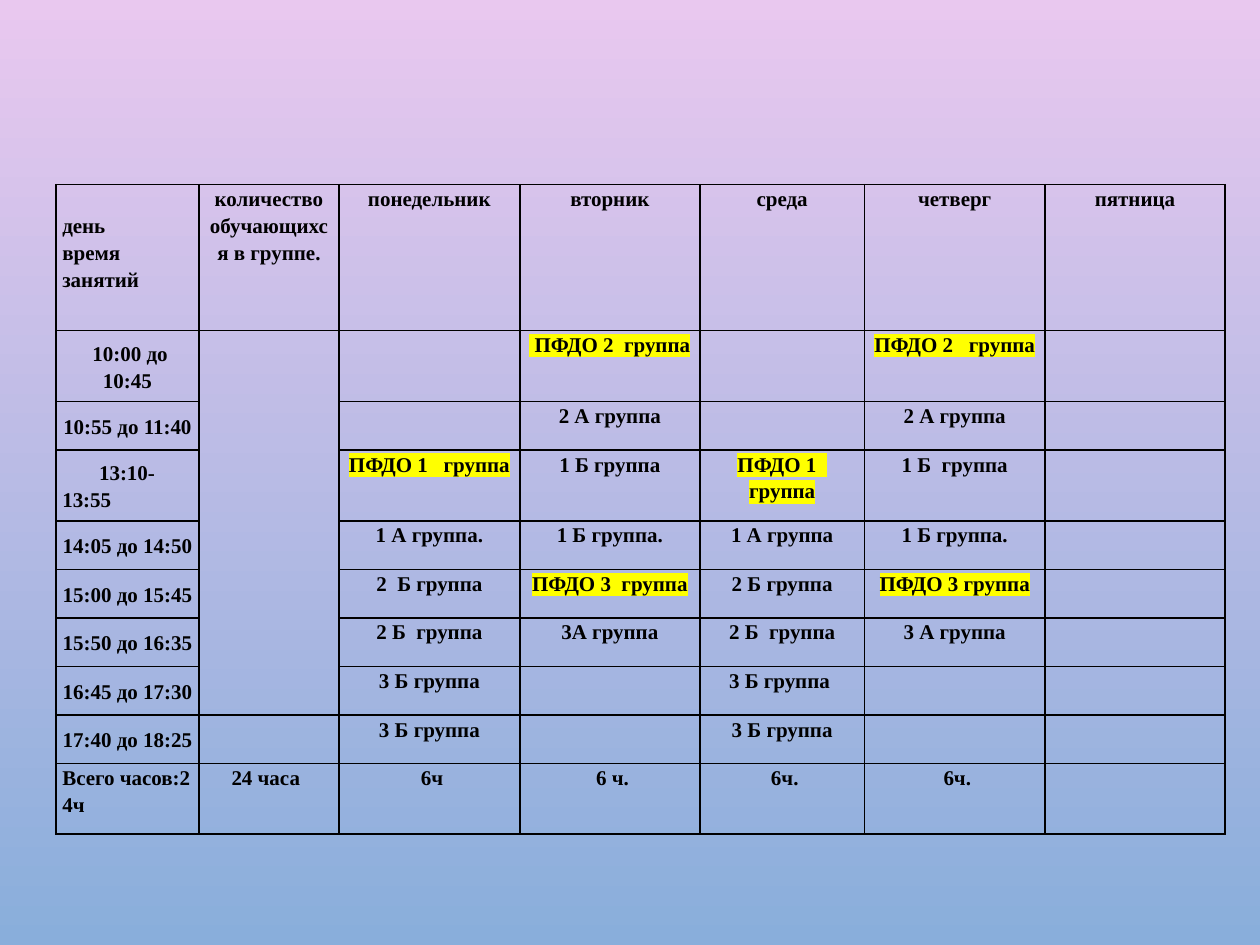
from lxml.etree import SubElement as Sub, Element
from pptx import Presentation
from pptx.dml.color import RGBColor as Rgb
from pptx.enum.text import MSO_ANCHOR as Anchor, PP_ALIGN as Align
from pptx.oxml.ns import qn
from pptx.util import Pt

# Content: one list per table row
ROWS = [
    ["день\nвремя занятий", "количество обучающихся в группе.", "понедельник",
     "вторник", "среда", "четверг", "пятница"],
    [" 10:00 до 10:45", "", "", " ПФДО 2  группа", "", "ПФДО 2   группа", ""],
    ["10:55 до 11:40", "", "", "2 А группа", "", "2 А группа", ""],
    ["13:10- 13:55", "", "ПФДО 1   группа", "1 Б группа", "ПФДО 1   группа",
     "1 Б  группа", ""],
    ["14:05 до 14:50", "", "1 А группа.", "1 Б группа.", "1 А группа",
     "1 Б группа.", ""],
    ["15:00 до 15:45", "", "2  Б группа", "ПФДО 3  группа", "2 Б группа",
     "ПФДО 3 группа", ""],
    ["15:50 до 16:35", "", "2 Б  группа", "3А группа", "2 Б  группа",
     "3 А группа", ""],
    ["16:45 до 17:30", "", "3 Б группа", "", "3 Б группа ", "", ""],
    ["17:40 до 18:25", "", "3 Б группа", "", "3 Б группа", "", ""],
    ["Всего часов:2 4ч", "24 часа", " 6ч", " 6 ч.", " 6ч.", " 6ч.", ""],
]
WIDTHS = [81.7, 80, 103.4, 102.9, 94, 103.2, 102.9]
TALL, MID, LOW = 83.4, 40.5, 27.75
HEIGHTS = [TALL, MID, LOW, MID] + [LOW] * 5 + [MID]
LEFT, TOP = 32, 105.5
COLORS = {"top": "E9C8EF", "base": "89AEDB", "ink": "000000", "mark": "FFFF00"}
FONT = {"name": "Times New Roman", "size": Pt(12), "bold": True}
INSETS = {"margin_left": Pt(3.6), "margin_right": Pt(3.6),
          "margin_top": 0, "margin_bottom": 0}

# Cells aligned left, with their first-line indents
INDENTS = {(0, 0): 0, (3, 0): 21, (9, 0): 0, (9, 1): 15}


def apply(item, values):
    for key, value in values.items():
        setattr(item, key, value)


def style(font):
    apply(font, FONT)
    font.color.rgb = Rgb.from_string(COLORS["ink"])


def border(cell):
    props = cell._tc.get_or_add_tcPr()
    for side in "LRTB":
        line = Sub(props, qn("a:ln" + side), w=str(Pt(1)))
        fill = Sub(line, qn("a:solidFill"))
        Sub(fill, qn("a:srgbClr"), val=COLORS["ink"])


def mark(run):
    glow = Element(qn("a:highlight"))
    Sub(glow, qn("a:srgbClr"), val=COLORS["mark"])
    run._r.rPr.find(qn("a:latin")).addprevious(glow)


def write(cell, text, spot):
    cell.text = text
    for para in cell.text_frame.paragraphs:
        para.line_spacing = 1.15
        para.alignment = Align.LEFT if spot in INDENTS else Align.CENTER
        if INDENTS.get(spot):
            para._p.get_or_add_pPr().set("indent", str(Pt(INDENTS[spot])))
        style(para.font)
        for run in para.runs:
            style(run.font)
            if "ПФДО" in text:
                mark(run)


deck = Presentation()
deck.slide_width, deck.slide_height = Pt(720), Pt(540)
slide = deck.slides.add_slide(deck.slide_layouts[6])

# Background gradient, top to bottom
back = slide.background.fill
back.gradient()
back.gradient_angle = 270
for stop, key in zip(back.gradient_stops, ("top", "base")):
    stop.color.rgb = Rgb.from_string(COLORS[key])

# Timetable
grid = slide.shapes.add_table(len(ROWS), len(WIDTHS), Pt(LEFT), Pt(TOP),
                              Pt(sum(WIDTHS)), Pt(sum(HEIGHTS))).table
grid.first_row = grid.horz_banding = False
for col, width in zip(grid.columns, WIDTHS):
    col.width = Pt(width)
for row, height in zip(grid.rows, HEIGHTS):
    row.height = Pt(height)
for r, texts in enumerate(ROWS):
    for c, text in enumerate(texts):
        cell = grid.cell(r, c)
        write(cell, text, (r, c))
        apply(cell, INSETS)
        border(cell)
        cell.fill.background()
        if c == 0 and 0 < r < len(ROWS) - 1:
            cell.vertical_anchor = Anchor.MIDDLE

# Corner label starts one line down; the group column is one tall cell
grid.cell(0, 0).margin_top = Pt(15.5)
grid.cell(1, 1).merge(grid.cell(7, 1))

deck.save("out.pptx")
